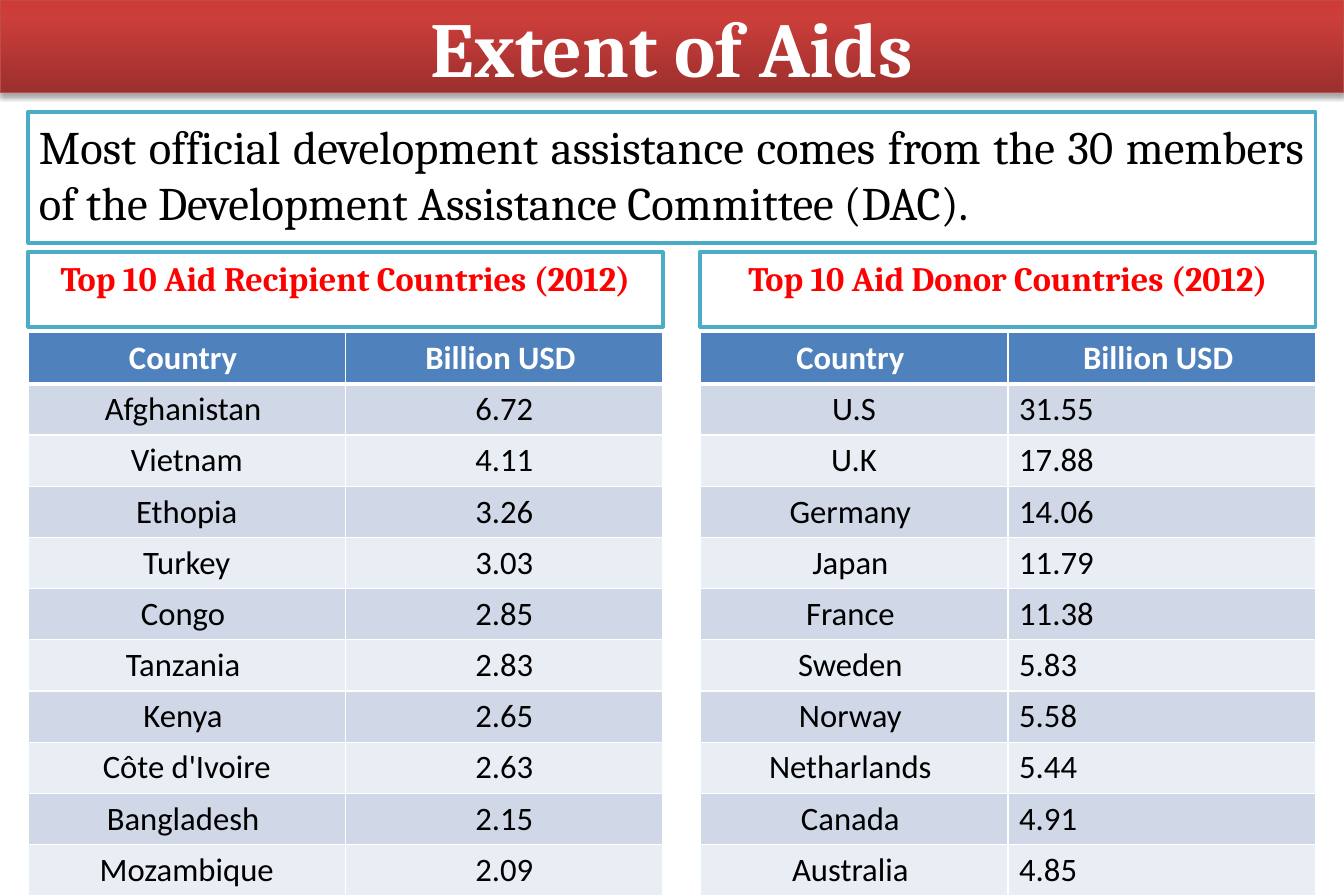
from lxml import etree
from pptx import Presentation
from pptx.dml.color import RGBColor
from pptx.enum.shapes import MSO_SHAPE as Shape
from pptx.enum.text import MSO_ANCHOR as Anchor, PP_ALIGN as Align
from pptx.oxml import parse_xml
from pptx.oxml.ns import nsdecls, qn
from pptx.util import Inches, Pt

COLORS = {
    "white": "FFFFFF", "black": "000000", "red": "FF0000", "teal": "4BACC6",
    "banner_line": "BF4C48", "header": "4F81BD",
    "band_dark": "D0D8E8", "band_light": "E9EDF4",
}
BANNER_STOPS = [(0, "9C2F2D"), (80, "CB3E3A"), (100, "CE3B37")]


def write(frame, text, align, color, **font_format):
    para = frame.paragraphs[0]
    para.alignment = align
    span = para.add_run()
    span.text = text
    span.font.color.rgb = RGBColor.from_string(COLORS[color])
    for name, value in font_format.items():
        setattr(span.font, name, value)


def add_box(page, left, top, width, height, line, line_width, anchor):
    box = page.shapes.add_shape(Shape.RECTANGLE, Inches(left), Inches(top),
                                Inches(width), Inches(height))
    box.shadow.inherit = False
    box.fill.solid()
    box.fill.fore_color.rgb = RGBColor.from_string(COLORS["white"])
    box.line.color.rgb = RGBColor.from_string(COLORS[line])
    box.line.width = Pt(line_width)
    box.text_frame.word_wrap = True
    box.text_frame.vertical_anchor = anchor
    return box


deck = Presentation()
deck.slide_width, deck.slide_height = Inches(12), Inches(8)
page = deck.slides.add_slide(deck.slide_layouts[6])

# Title banner with gradient and soft shadow
banner = add_box(page, 0, 0, 12, 0.83, "banner_line", 0.75, Anchor.MIDDLE)
banner.fill.gradient()
banner.fill.gradient_angle = 90
properties = banner.fill._xPr
stops = properties.find(qn("a:gradFill")).find(qn("a:gsLst"))
for stop in list(stops):
    stops.remove(stop)
for position, color in BANNER_STOPS:
    stop = etree.SubElement(stops, qn("a:gs"), pos=str(position * 1000))
    etree.SubElement(stop, qn("a:srgbClr"), val=color)
properties.find(qn("a:effectLst")).append(parse_xml(
    f'<a:outerShdw {nsdecls("a")} blurRad="{Pt(3.1)}" dist="{Pt(1.8)}" dir="5400000" '
    f'rotWithShape="0"><a:srgbClr val="{COLORS["black"]}"><a:alpha val="35000"/>'
    '</a:srgbClr></a:outerShdw>'))
write(banner.text_frame, "Extent of Aids", Align.CENTER, "white",
      name="Cambria", size=Pt(50), bold=True)

# Introductory statement
intro = add_box(page, 0.25, 1, 11.5, 1.17, "teal", 2, Anchor.TOP)
write(intro.text_frame,
      "Most official development assistance comes from the 30 members "
      "of the Development Assistance Committee (DAC).",
      Align.JUSTIFY, "black", name="Cambria", size=Pt(30))

# Country rankings: heading, left, width, alignment of amounts, rows
recipients = [
    ("Afghanistan ", "6.72"), ("Vietnam", "4.11"), ("Ethopia", "3.26"),
    ("Turkey", "3.03"), ("Congo ", "2.85"), ("Tanzania ", "2.83"),
    ("Kenya ", "2.65"), ("Côte d'Ivoire", "2.63"), ("Bangladesh ", "2.15"),
    ("Mozambique", "2.09"),
]
donors = [
    ("U.S", "31.55"), ("U.K", "17.88"), ("Germany ", "14.06"),
    ("Japan ", "11.79"), ("France ", "11.38"), ("Sweden ", "5.83"),
    ("Norway ", "5.58"), ("Netharlands ", "5.44"), ("Canada ", "4.91"),
    ("Australia ", "4.85"),
]
rankings = [
    ("Top 10 Aid Recipient Countries (2012)", 0.25, 5.67, Align.CENTER, recipients),
    ("Top 10 Aid Donor Countries (2012)", 6.25, 5.5, Align.LEFT, donors),
]

for heading, left, width, amount_align, countries in rankings:
    label = add_box(page, left, 2.25, width, 0.67, "teal", 2, Anchor.TOP)
    write(label.text_frame, heading, Align.CENTER, "red",
          name="Cambria", size=Pt(22), bold=True)

    rows = [("Country ", "Billion USD ")] + countries
    table = page.shapes.add_table(len(rows), 2, Inches(left), Inches(2.97),
                                  Inches(width), Inches(5.01)).table
    for row, values in enumerate(rows):
        is_header = row == 0
        band = "header" if is_header else "band_dark" if row % 2 else "band_light"
        for column, text in enumerate(values):
            cell = table.cell(row, column)
            # White borders, thicker under the header
            widths = {"lnL": 1, "lnR": 1, "lnT": 3 if row == 1 else 1,
                      "lnB": 3 if is_header else 1}
            for side, points in widths.items():
                cell._tc.get_or_add_tcPr().append(parse_xml(
                    f'<a:{side} {nsdecls("a")} w="{Pt(points)}"><a:solidFill>'
                    f'<a:srgbClr val="{COLORS["white"]}"/></a:solidFill></a:{side}>'))
            cell.fill.solid()
            cell.fill.fore_color.rgb = RGBColor.from_string(COLORS[band])
            align = amount_align if column and not is_header else Align.CENTER
            write(cell.text_frame, text, align, "white" if is_header else "black",
                  name="Calibri", size=Pt(21), bold=is_header)

deck.save("out.pptx")
